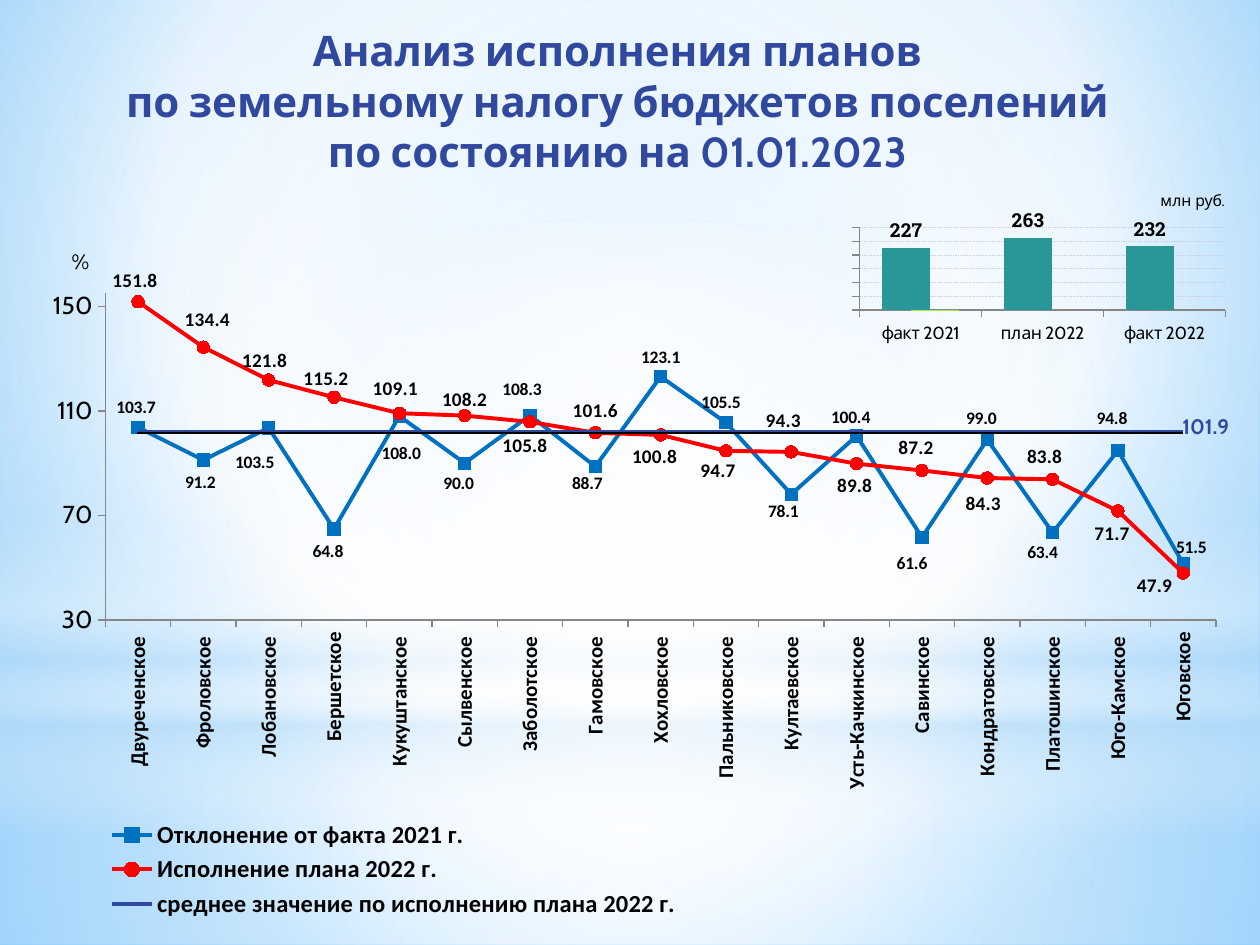
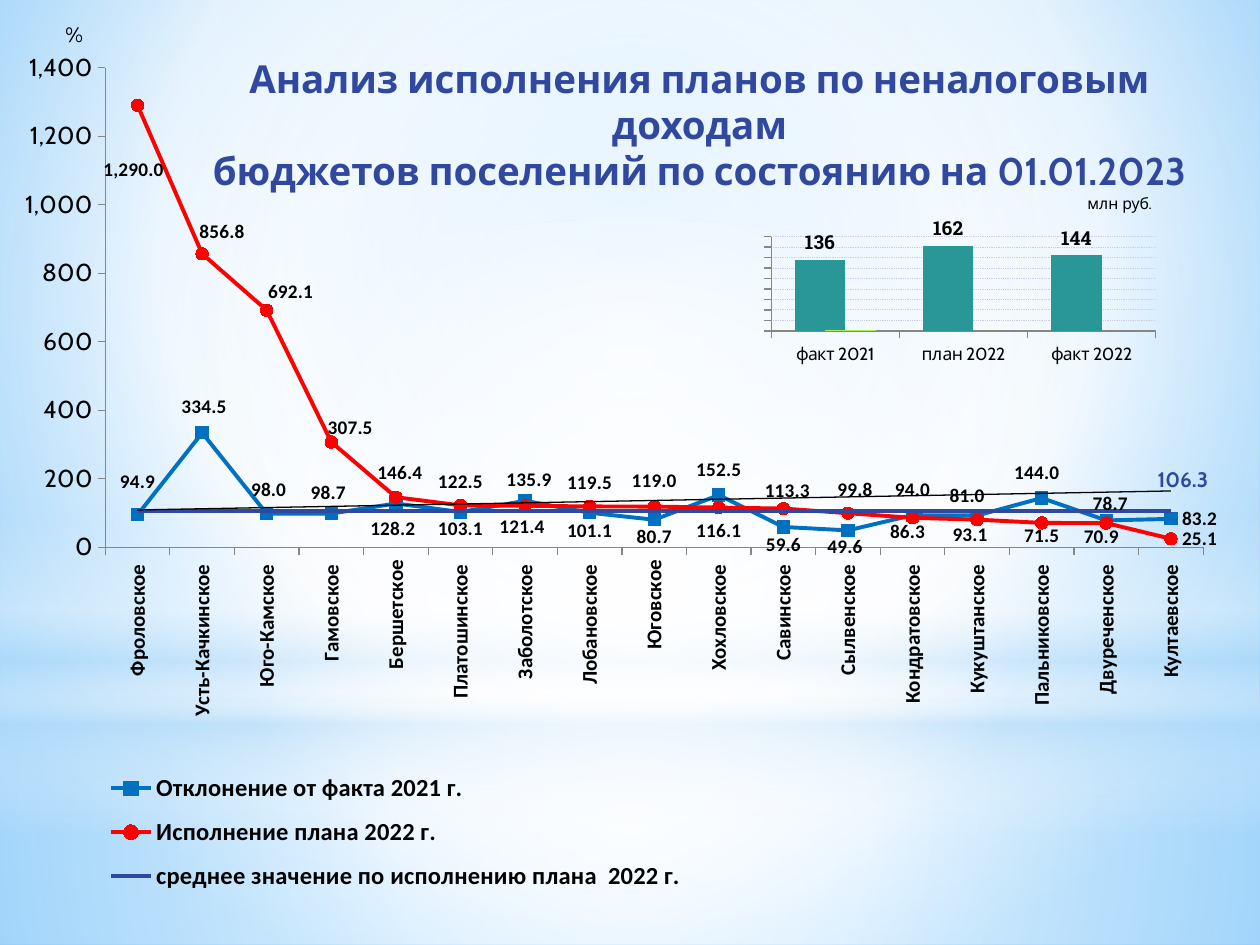
from lxml.etree import SubElement
from pptx import Presentation
from pptx.chart.data import CategoryChartData as Data
from pptx.dml.color import RGBColor as Rgb
from pptx.enum.chart import XL_CHART_TYPE as Kind, XL_LABEL_POSITION as Pos
from pptx.enum.chart import XL_LEGEND_POSITION as Side, XL_MARKER_STYLE as Mark
from pptx.enum.chart import XL_TICK_LABEL_POSITION as Tick, XL_TICK_MARK as Notch
from pptx.enum.dml import MSO_LINE as Dash
from pptx.enum.shapes import MSO_CONNECTOR as Conn, MSO_SHAPE as Form
from pptx.enum.text import MSO_ANCHOR as Anchor, PP_ALIGN as Align
from pptx.oxml import parse_xml
from pptx.oxml.ns import nsdecls, qn
from pptx.util import Emu, Pt

NAVY, BLUE, RED, TEAL, LIME = "31489F", "0070C0", "FF0000", "299797", "A7EA52"
BLACK, GREY, WHITE, SKY, MIST = "000000", "868686", "FFFFFF", "B4DCFA", "C8CDE5"
HEAD, BODY, SLAB = "Cabin", "Calibri", "Roboto Slab"
SPOTS = {"a": Pos.ABOVE, "b": Pos.BELOW, "l": Pos.LEFT, "r": Pos.RIGHT}
BARE = ("Бершетское", "Юговское")
MID = (50, 50, 50, 50)
BANDS = [
    (Form.RECTANGLE, (0, 703, 1260, 242),
     [(0, WHITE, 91), (37, WHITE, 76), (100, SKY, 79)], MID),
    (Form.RECTANGLE, (0, 0, 1260, 703),
     [(0, WHITE, 89), (48, WHITE, 62), (100, SKY, 79)], MID),
    (Form.RECTANGLE, (0, 519, 1260, 315),
     [(0, WHITE, 0), (29, WHITE, 30), (45, SKY, 40), (55, WHITE, 26),
      (65, SKY, 60), (100, WHITE, 0)], None),
    (Form.OVAL, (0, 220, 1260, 703), [(0, WHITE, 100), (56, WHITE, 0)], MID),
]
LAND = {
    "title": ["Анализ исполнения планов", "по земельному налогу бюджетов поселений",
              "по состоянию на 01.01.2023"],
    "head": ((0, 16, 1235, 169), 24),
    "box": (5, 111, 1255, 829),
    "plot": (0.08, 0.22, 0.885, 0.394),
    "key": (0.06, 0.85, 0.5, 0.13),
    "unit": (0.05, 0.16),
    "scale": (30, 155, 40),
    "cats": ["Двуреченское", "Фроловское", "Лобановское", "Бершетское", "Кукуштанское",
             "Сылвенское", "Заболотское", "Гамовское", "Хохловское", "Пальниковское",
             "Култаевское", "Усть-Качкинское", "Савинское", "Кондратовское",
             "Платошинское", "Юго-Камское", "Юговское"],
    "past": [103.7, 91.2, 103.5, 64.8, 108, 90, 108.3, 88.7, 123.1, 105.5, 78.1,
             100.4, 61.6, 99, 63.4, 94.8, 51.5],
    "plan": [151.8, 134.4, 121.8, 115.2, 109.1, 108.2, 105.8, 101.6, 100.8, 94.7,
             94.3, 89.8, 87.2, 84.3, 83.8, 71.7, 47.9],
    "mean": ("среднее значение по исполнению плана 2022 г.", 101.9),
    "tags": [
        (10, "abbbbbabaabababaa",
         {0: (-2, 1), 1: (-3, 2), 2: (-14, 14), 3: (-6, 2), 4: (2, 17), 5: (-6, -1),
          6: (-8, -5), 7: (-8, -4), 8: (0, 2), 9: (-5, 1), 10: (-8, -4), 11: (-6, 3),
          12: (-10, 5), 13: (-6, 0), 14: (-10, -1), 15: (-6, -11), 16: (8, 5)}),
        (11, "aaaaaababbabababl",
         {0: (-3, 2), 1: (4, -4), 2: (-4, 4), 3: (-8, 5), 4: (-4, -1), 5: (0, 7),
          6: (-5, 1), 7: (0, 1), 8: (-6, -1), 9: (-8, -3), 10: (-8, -8),
          11: (-2, -1), 12: (-6, 0), 13: (-4, 3), 14: (-8, 1), 15: (-6, 0),
          16: (0, 13)})],
    "end": ("r", (-6, -5)),
    "trend": ((137, 433, 1183, 433), 1.5),
    "bars": ((848, 165, 387, 208), [227, 263, 232], (0, 300, 50)),
}
OTHER = {
    "title": ["Анализ исполнения планов по неналоговым доходам",
              "бюджетов поселений по состоянию на 01.01.2023"],
    "head": ((154, 45, 1091, 158), 22),
    "box": (25, 16, 1216, 907),
    "plot": (0.066, 0.057, 0.903, 0.529),
    "key": (0.055, 0.82, 0.5, 0.16),
    "unit": (0.03, 0.0),
    "scale": (0, 1400, 200),
    "cats": ["Фроловское", "Усть-Качкинское", "Юго-Камское", "Гамовское", "Бершетское",
             "Платошинское", "Заболотское", "Лобановское", "Юговское", "Хохловское",
             "Савинское", "Сылвенское", "Кондратовское", "Кукуштанское",
             "Пальниковское", "Двуреченское", "Култаевское"],
    "past": [94.9, 334.5, 98, 98.7, 128.2, 103.1, 135.9, 101.1, 80.7, 152.5, 59.6,
             49.6, 94, 93.1, 144, 78.7, 83.2],
    "plan": [1290, 856.8, 692.1, 307.5, 146.4, 122.5, 121.4, 119.5, 119, 116.1,
             113.3, 99.8, 86.3, 81, 71.5, 70.9, 25.1],
    "mean": ("среднее значение по исполнению плана  2022 г.", 106.3),
    "tags": [
        (11, "aaaabbabbabbabaar",
         {0: (0, -10), 1: (2, -3), 2: (2, -1), 3: (-3, 2), 4: (-3, 3), 5: (0, -6),
          6: (4, 2), 7: (0, -5), 8: (0, -6), 9: (0, -2), 10: (0, -5), 11: (-3, -6),
          12: (0, -2), 13: (-7, -4), 14: (-5, -2), 15: (4, 6)}),
        (11, "baaaaabaabaababbr",
         {0: (-4, 42), 1: (20, 1), 2: (24, 5), 3: (19, 9), 4: (4, -1), 5: (0, -1),
          6: (-3, -2), 7: (0, -1), 8: (0, -3), 10: (4, 5), 11: (7, 0), 12: (-5, -9),
          13: (-10, -1), 14: (0, -10), 15: (-5, -9)})],
    "end": ("a", (12, -13)),
    "trend": ((137, 510, 1171, 491), 0.75),
    "bars": ((759, 165, 407, 238), [136, 162, 144], (0, 180, 20)),
}


def px(num):
    """Turn pixels into EMU."""
    return Emu(round(num * 914400 / 126))


def rgb(code):
    """Turn a hex string into a colour."""
    return Rgb.from_string(code)


def seek(node, *tags):
    """Find the first descendant along the given tags."""
    return node.find(".//" + "/".join(qn(tag) for tag in tags))


def ink(font, size, face, code=BLACK, bold=False):
    """Set size, face, colour and weight of a font."""
    font.size, font.name, font.bold = Pt(size), face, bold
    font.color.rgb = rgb(code)


def blend(host, stops, focus):
    """Replace the solid fill of a node by a gradient."""
    marks = "".join(
        f'<a:gs pos="{pos * 1000}"><a:srgbClr val="{code}">'
        f'<a:alpha val="{alpha * 1000}"/></a:srgbClr></a:gs>'
        for pos, code, alpha in stops)
    way = '<a:lin ang="5400000" scaled="0"/>'
    if focus:
        rim = " ".join(f'{side}="{num * 1000}"' for side, num in zip("ltrb", focus))
        way = f'<a:path path="circle"><a:fillToRect {rim}/></a:path>'
    grad = parse_xml(f'<a:gradFill {nsdecls("a")} rotWithShape="1">'
                     f'<a:gsLst>{marks}</a:gsLst>{way}</a:gradFill>')
    host.replace(host.find(qn("a:solidFill")), grad)


def dress(master, slide):
    """Give the master its backdrop and its soft bands."""
    master.background.fill.solid()
    master.background.fill.fore_color.rgb = rgb(WHITE)
    blend(seek(master.element, "p:bgPr"),
          [(0, "9ED5FF", 100), (60, WHITE, 100), (100, "5BB9FF", 100)], (20, 10, 20, 60))
    for num, (form, box, stops, focus) in enumerate(BANDS):
        band = slide.shapes.add_shape(form, *map(px, box))
        band.shadow.inherit = False
        band.fill.solid()
        band.line.fill.background()
        blend(seek(band.element, "p:spPr"), stops, focus)
        seek(band.element, "p:cNvPr").set("id", str(100 + num))
        master.shapes.element.insert(2 + num, band.element)


def head(slide, lines, box, size):
    """Add the centred slide title."""
    frame = slide.shapes.add_textbox(*map(px, box)).text_frame
    frame.word_wrap, frame.vertical_anchor = True, Anchor.MIDDLE
    para = frame.paragraphs[0]
    para.alignment = Align.CENTER
    for num, line in enumerate(lines):
        if num:
            para.add_line_break()
        run = para.add_run()
        run.text = line
        ink(run.font, size, HEAD, NAVY, True)


def place(node, spot, index, **modes):
    """Give a chart part a manual layout."""
    for old in node.findall(qn("c:layout")):
        node.remove(old)
    layout = node.makeelement(qn("c:layout"))
    node.insert(index, layout)
    manual = SubElement(layout, qn("c:manualLayout"))
    parts = {**modes, **dict(zip("xywh", spot))}
    for key, val in parts.items():
        SubElement(manual, qn("c:" + key)).set("val", str(val))


def fix(node, spot, index):
    """Place a chart part by its top left corner."""
    place(node, spot, index, xMode="edge", yMode="edge")


def graph(slide, kind, box, plot, cats, rows, fmt):
    """Add a chart with a fixed plot area."""
    data = Data(number_format=fmt)
    data.categories = cats
    for name, vals in rows:
        data.add_series(name, vals)
    chart = slide.shapes.add_chart(kind, *map(px, box), data).chart
    chart.has_title = chart.has_legend = False
    ink(chart.font, 18, HEAD)
    place(seek(chart.element, "c:plotArea"), plot, 0,
          layoutTarget="inner", xMode="edge", yMode="edge")
    return chart


def axes(chart, scale, unit, spot, size):
    """Style both axes and name the unit."""
    across, up = chart.category_axis, chart.value_axis
    up.minimum_scale, up.maximum_scale, up.major_unit = scale
    up.has_major_gridlines = False
    for axis in (across, up):
        axis.major_tick_mark, axis.minor_tick_mark = Notch.OUTSIDE, Notch.NONE
        axis.format.line.color.rgb = rgb(GREY)
        axis.format.line.width = Pt(0.75)
    up.tick_labels.number_format = "#,##0"
    up.tick_labels.number_format_is_linked = False
    ink(up.tick_labels.font, 14, HEAD)
    title = up.axis_title
    run = title.text_frame.paragraphs[0].add_run()
    run.text = unit
    ink(run.font, size, HEAD)
    turn = seek(title.element, "a:bodyPr")
    turn.set("rot", "0")
    turn.set("vert", "horz")
    fix(title.element, spot, 1)


def tag(chart, point, spot, move, box, style):
    """Label one point and nudge the label."""
    label = point.data_label
    ink(label.font, *style)
    label.position = SPOTS[spot]
    if move:
        node = list(chart.element.iter(qn("c:dLbl")))[-1]
        place(node, (round(move[0] / box[2], 4), round(move[1] / box[3], 4)), 1)


def unlead(chart):
    """Turn off the leader lines of moved labels."""
    for group in chart.element.iter(qn("c:dLbls")):
        for old in group.findall(qn("c:showLeaderLines")):
            group.remove(old)
        SubElement(group, qn("c:showLeaderLines")).set("val", "0")


def trace(row, code, mark):
    """Style one line and its markers."""
    row.smooth = False
    row.format.line.color.rgb = rgb(code)
    row.format.line.width = Pt(2.25)
    row.marker.style = mark
    if mark != Mark.NONE:
        row.marker.size = 7
        row.marker.format.fill.solid()
        row.marker.format.fill.fore_color.rgb = rgb(code)
        row.marker.format.line.color.rgb = rgb(code)


def curves(slide, info):
    """Add the line chart by settlement."""
    name, mean = info["mean"]
    box = info["box"]
    cats = [cat if cat in BARE else cat + " " for cat in info["cats"]]
    rows = [("Отклонение от факта 2021 г.", info["past"]),
            ("Исполнение плана 2022 г.", info["plan"]), (name, [mean] * len(cats))]
    chart = graph(slide, Kind.LINE_MARKERS, box, info["plot"], cats, rows, "#,##0.0")
    axes(chart, info["scale"], "%", info["unit"], 12)
    ink(chart.category_axis.tick_labels.font, 12, BODY, bold=True)
    seek(chart.element, "c:catAx", "c:txPr", "a:bodyPr").set("rot", "-5400000")
    chart.has_legend = True
    chart.legend.position = Side.BOTTOM
    chart.legend.include_in_layout = False
    ink(chart.legend.font, 14, BODY, bold=True)
    fix(seek(chart.element, "c:legend"), info["key"], 1)
    past, plan, norm = chart.plots[0].series
    trace(past, BLUE, Mark.SQUARE)
    trace(plan, RED, Mark.CIRCLE)
    trace(norm, NAVY, Mark.NONE)
    for row, (size, spots, moves) in zip((past, plan), info["tags"]):
        row.data_labels.show_value = True
        for num, spot in enumerate(spots):
            tag(chart, row.points[num], spot, moves.get(num), box,
                (size, BODY, BLACK, True))
    norm.data_labels.show_value = False
    spot, move = info["end"]
    tag(chart, norm.points[len(cats) - 1], spot, move, box, (12, HEAD, NAVY, True))
    unlead(chart)


def bars(slide, box, vals, scale):
    """Add the small column chart of totals."""
    rows = [("Series 1", vals), ("Series 2", [1, None, None])]
    chart = graph(slide, Kind.COLUMN_CLUSTERED, box, (0.03, 0.301, 0.945, 0.397),
                  ["факт 2021", "план 2022", "факт 2022"], rows, "#,##0")
    axes(chart, scale, "млн руб.", (0.8, 0.1), 9)
    ink(chart.category_axis.tick_labels.font, 10, HEAD)
    up = chart.value_axis
    up.tick_label_position = Tick.NONE
    up.has_major_gridlines = True
    grid = up.major_gridlines.format.line
    grid.color.rgb, grid.width, grid.dash_style = rgb(MIST), Pt(0.5), Dash.ROUND_DOT
    plot = chart.plots[0]
    plot.gap_width, plot.overlap, plot.vary_by_categories = 94, 40, False
    for row, code in zip(plot.series, (TEAL, LIME)):
        row.format.fill.solid()
        row.format.fill.fore_color.rgb = rgb(code)
    labels = plot.series[0].data_labels
    labels.show_value, labels.position = True, Pos.OUTSIDE_END
    ink(labels.font, 11, SLAB, bold=True)


def trend(slide, ends, width):
    """Add the thin black line across the chart."""
    line = slide.shapes.add_connector(Conn.STRAIGHT, *map(px, ends))
    line.line.color.rgb, line.line.width = rgb(BLACK), Pt(width)
    SubElement(seek(line.element, "p:spPr"), qn("a:effectLst"))


def main():
    """Build both slides and save them."""
    prs = Presentation()
    prs.slide_width, prs.slide_height = px(1260), px(945)
    for info in (LAND, OTHER):
        slide = prs.slides.add_slide(prs.slide_layouts[6])
        if info is LAND:
            dress(prs.slide_master, slide)
        head(slide, info["title"], *info["head"])
        curves(slide, info)
        trend(slide, *info["trend"])
        bars(slide, *info["bars"])
    prs.save("out.pptx")


if __name__ == "__main__":
    main()
